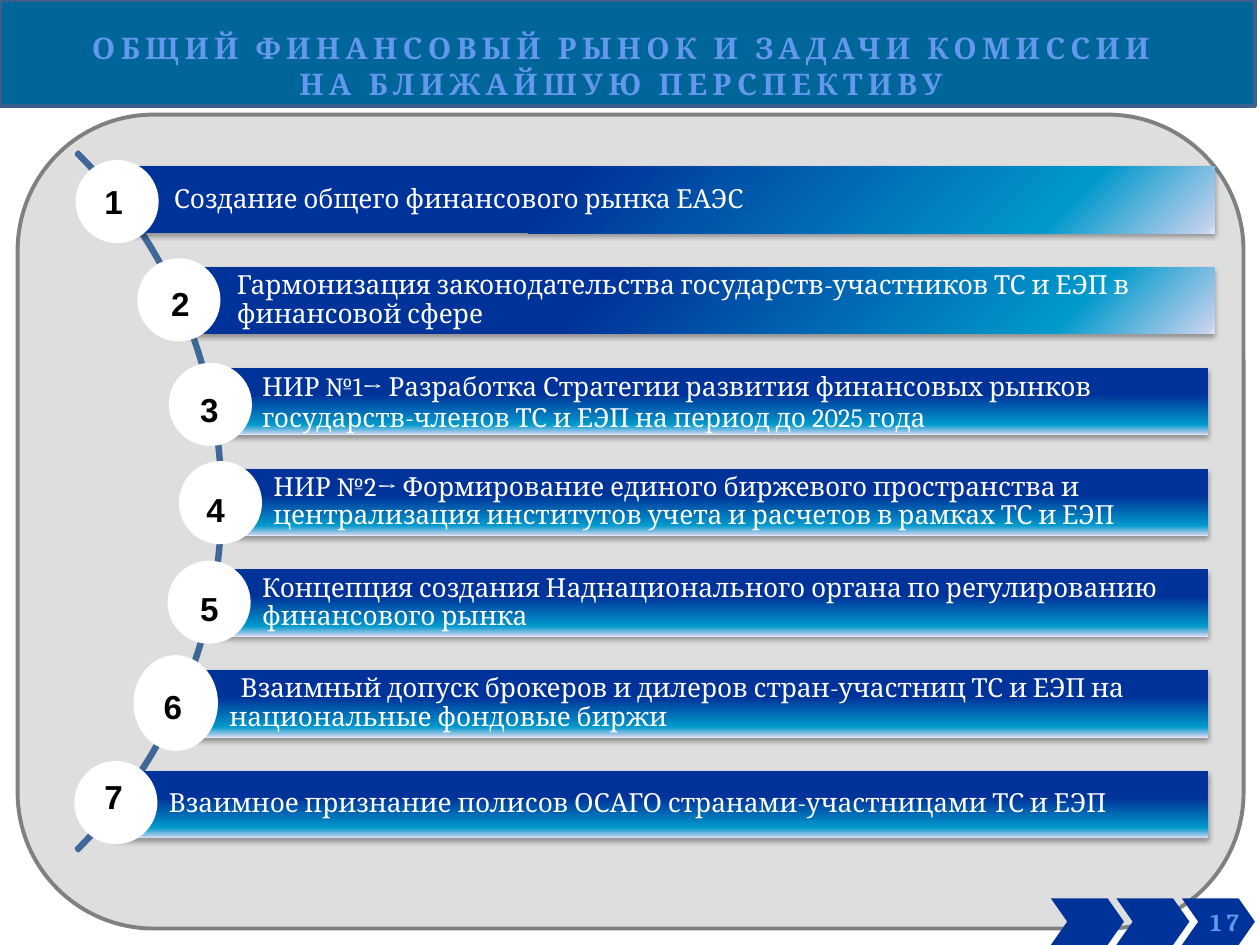
from dataclasses import dataclass

from lxml.etree import SubElement
from pptx import Presentation
from pptx.dml.color import RGBColor
from pptx.enum.shapes import MSO_SHAPE
from pptx.enum.text import MSO_ANCHOR, PP_ALIGN
from pptx.oxml import parse_xml
from pptx.oxml.ns import nsdecls, qn
from pptx.util import Emu, Inches, Pt

# Grid of square cells: 100 columns by 75 rows
COLS, ROWS = 100, 75
CELL = Inches(0.1)
BAR_TOP, BAR_PITCH, BAR_HEIGHT = 13.2, 8, 5.3
CHEVRON_LEFT, CHEVRON_PITCH = 83.4, 5.2


@dataclass(frozen=True)
class Theme:
    heading_font: str = "Cambria"
    number_font: str = "Arial"
    title_size: float = 17
    item_size: float = 15
    number_size: float = 19
    page_size: float = 14
    white: str = "FFFFFF"
    black: str = "000000"
    panel: str = "D9D9D9"
    panel_line: str = "808080"
    header: str = "006699"
    header_line: str = "3A5F8C"
    arc: str = "3F6797"
    navy: str = "003399"
    accent: str = "6398ED"
    bar_stops: tuple = ((40, "003399"), (85, "0099CC"), (99, "C2D1ED"), (100, "E1E8F5"))


@dataclass(frozen=True)
class Box:
    col: float
    row: float
    width: float
    height: float

    def emu(self) -> list[Emu]:
        return [Emu(round(n * CELL)) for n in (self.col, self.row, self.width, self.height)]


@dataclass(frozen=True)
class Task:
    text: str
    bar_col: float
    circle: Box
    number_at: tuple[float, float]
    right: float = 95.9
    angle: int = 90
    line_spacing: float = 0.9
    indent: float = 0


THEME = Theme()
TASKS = [
    Task("Создание общего финансового рынка ЕАЭС",
         9.6, Box(6, 12.7, 6.6, 6.6), (7.3, 13.9), right=96.4, angle=45),
    Task("Гармонизация законодательства государств-участников ТС и ЕЭП в финансовой сфере",
         14.6, Box(10.9, 20.5, 6.6, 6.6), (12.6, 22), right=96.4, angle=45),
    Task("НИР №1→ Разработка Стратегии развития финансовых рынков "
         "государств-членов ТС и ЕЭП на период до 2025 года",
         16.6, Box(13.4, 28.8, 6.6, 6.6), (14.9, 30.4), line_spacing=1),
    Task("НИР №2→ Формирование единого биржевого пространства и "
         "централизация институтов учета и расчетов в рамках ТС и ЕЭП",
         17.5, Box(14.2, 36.6, 6.6, 6.6), (15.4, 38.3)),
    Task("Концепция создания Наднационального органа по регулированию финансового рынка",
         16.6, Box(13.3, 44.5, 6.6, 6.6), (14.9, 46.2)),
    Task("Взаимный допуск брокеров и дилеров стран-участниц ТС и ЕЭП на "
         "национальные фондовые биржи",
         14, Box(10.6, 52, 6.7, 7.6), (12, 54), indent=0.9),
    Task("Взаимное признание полисов ОСАГО странами-участницами ТС и ЕЭП",
         9.2, Box(5.9, 60.4, 6.6, 6.6), (7.3, 61.1)),
]


def add_shape(s, kind: MSO_SHAPE, box: Box, fill: str, line: str | None = None,
              weight: float = 2, adjustments: tuple = ()):
    sp = s.shapes.add_shape(kind, *box.emu())
    sp.shadow.inherit = False
    sp.fill.solid()
    sp.fill.fore_color.rgb = RGBColor.from_string(fill)
    if line:
        sp.line.color.rgb = RGBColor.from_string(line)
        sp.line.width = Pt(weight)
    else:
        sp.line.fill.background()
    for i, value in enumerate(adjustments):
        sp.adjustments[i] = value
    return sp


def style(p, font: str, size: float, color: str, bold: bool = False, spacing: float = 0) -> None:
    for r in p.runs:
        r.font.name, r.font.size, r.font.bold = font, Pt(size), bold
        r.font.color.rgb = RGBColor.from_string(color)
        if spacing:
            r.font._element.set("spc", str(round(spacing * 100)))


def add_label(s, box: Box, text: str):
    tf = s.shapes.add_textbox(*box.emu()).text_frame
    tf.word_wrap = True
    tf.text = text
    return tf


def set_gradient(sp, stops: tuple, angle: int) -> None:
    gs = "".join(f'<a:gs pos="{pos * 1000}"><a:srgbClr val="{color}"/></a:gs>'
                 for pos, color in stops)
    solid = sp._element.spPr.find(qn("a:solidFill"))
    solid.getparent().replace(solid, parse_xml(
        f'<a:gradFill rotWithShape="1" {nsdecls("a")}><a:gsLst>{gs}</a:gsLst>'
        f'<a:lin ang="{angle * 60000}" scaled="0"/></a:gradFill>'))


def set_shadow(sp) -> None:
    effects = sp._element.spPr.find(qn("a:effectLst"))
    effects.append(parse_xml(
        f'<a:outerShdw {nsdecls("a")} blurRad="{Pt(3.1)}" dist="{Pt(1.8)}" dir="5400000" '
        f'rotWithShape="0"><a:srgbClr val="{THEME.black}"><a:alpha val="35000"/>'
        '</a:srgbClr></a:outerShdw>'))


def add_task(s, index: int, task: Task) -> None:
    box = Box(task.bar_col, BAR_TOP + index * BAR_PITCH, task.right - task.bar_col, BAR_HEIGHT)
    bar = add_shape(s, MSO_SHAPE.RECTANGLE, box, THEME.navy)
    set_gradient(bar, THEME.bar_stops, task.angle)
    set_shadow(bar)
    tf = bar.text_frame
    tf.word_wrap = True
    tf.vertical_anchor = MSO_ANCHOR.MIDDLE
    tf.margin_left = Inches(0.42)
    tf.margin_top = tf.margin_right = tf.margin_bottom = Inches(0.04)
    tf.text = task.text
    p = tf.paragraphs[0]
    p.alignment, p.line_spacing = PP_ALIGN.LEFT, task.line_spacing
    if task.indent:
        p._p.get_or_add_pPr().set("indent", str(round(task.indent * CELL)))
    style(p, THEME.heading_font, THEME.item_size, THEME.white)

    add_shape(s, MSO_SHAPE.OVAL, task.circle, THEME.white)
    number = add_label(s, Box(*task.number_at, 4.7, 4.2), str(index + 1))
    style(number.paragraphs[0], THEME.number_font, THEME.number_size, THEME.black, bold=True)


def add_header(s) -> None:
    add_shape(s, MSO_SHAPE.RECTANGLE, Box(0, 0, 99.6, 8.4), THEME.header, THEME.header_line)
    tf = add_label(s, Box(1.5, 1.9, 95.6, 6.7),
                   "ОБЩИЙ ФИНАНСОВЫЙ РЫНОК И ЗАДАЧИ КОМИССИИ\nНА БЛИЖАЙШУЮ ПЕРСПЕКТИВУ")
    for p in tf.paragraphs:
        p.alignment = PP_ALIGN.CENTER
        style(p, THEME.heading_font, THEME.title_size, THEME.accent, bold=True, spacing=3)


def add_page_mark(s, page: str) -> None:
    chevrons = [add_shape(s, MSO_SHAPE.CHEVRON,
                          Box(CHEVRON_LEFT + i * CHEVRON_PITCH, 71.3, 5.8, 3.7),
                          THEME.navy, adjustments=(0.35,)) for i in range(3)]
    tf = chevrons[-1].text_frame
    tf.word_wrap = False
    tf.vertical_anchor = MSO_ANCHOR.MIDDLE
    tf.margin_left = Inches(0.2)
    tf.text = page
    p = tf.paragraphs[0]
    p.alignment = PP_ALIGN.CENTER
    style(p, THEME.heading_font, THEME.page_size, THEME.accent, bold=True, spacing=3)


def main() -> None:
    prs = Presentation()
    prs.slide_width, prs.slide_height = COLS * CELL, ROWS * CELL
    s = prs.slides.add_slide(prs.slide_layouts[6])

    # Translucent panel behind the list
    panel = add_shape(s, MSO_SHAPE.ROUNDED_RECTANGLE, Box(1.4, 9.1, 97.3, 64.6),
                      THEME.panel, THEME.panel_line, 2.25, (0.167,))
    color = panel._element.spPr.find(qn("a:solidFill")).find(qn("a:srgbClr"))
    SubElement(color, qn("a:alpha")).set("val", "86000")

    add_header(s)

    # Arc from -45 to 45 degrees, with the tasks along it
    add_shape(s, MSO_SHAPE.BLOCK_ARC, Box(-60.7, 0.6, 78.4, 78.4),
              THEME.arc, THEME.arc, 2, (189, 27, 0.003))
    for index, task in enumerate(TASKS):
        add_task(s, index, task)

    add_page_mark(s, "17")
    prs.save("out.pptx")


if __name__ == "__main__":
    main()
